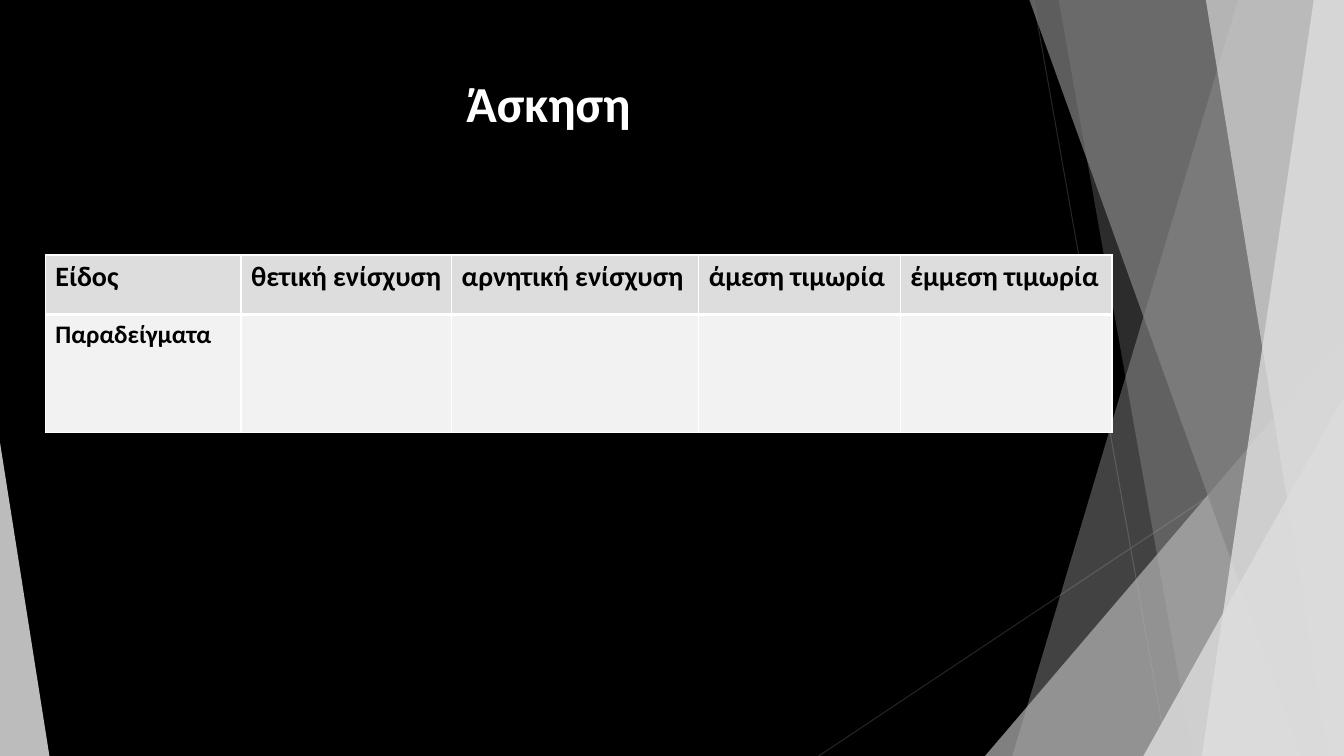
from lxml import etree
from pptx import Presentation
from pptx.dml.color import RGBColor
from pptx.enum.shapes import MSO_CONNECTOR, MSO_SHAPE
from pptx.enum.text import MSO_ANCHOR, PP_ALIGN
from pptx.oxml.ns import qn
from pptx.util import Inches, Pt

STRAIGHT = MSO_CONNECTOR.STRAIGHT
TRIANGLE = MSO_SHAPE.ISOSCELES_TRIANGLE
TOP = MSO_ANCHOR.TOP
CENTER = PP_ALIGN.CENTER

WIDTH, HEIGHT = 13.33, 7.5
TITLE_ONLY = 5
FONT = "Calibri"
BLACK, WHITE = "000000", "FFFFFF"
PALE, LIGHT = "DDDDDD", "F2F2F2"
HEADINGS = ["Είδος", "θετική ενίσχυση", "αρνητική ενίσχυση",
            "άμεση τιμωρία", "έμμεση τιμωρία"]
EXAMPLES = ["Παραδείγματα", "", "", "", ""]
COLUMN_WIDTHS = [1.94, 2.09, 2.45, 2, 2.1]
ROW_HEIGHTS = [0.59, 1.17]


def color(value):
    return RGBColor.from_string(value)


def format_text(frame, size, text_color):
    for para in frame.paragraphs:
        for span in para.runs:
            span.font.name = FONT
            span.font.size = Pt(size)
            span.font.bold = True
            span.font.color.rgb = color(text_color)


def paint(shape, fill, opacity):
    """Give a facet a see-through fill with no outline; opacity is in percent."""
    shape.shadow.inherit = False
    shape.line.fill.background()
    shape.fill.solid()
    shape.fill.fore_color.rgb = color(fill)
    tone = shape.fill._xPr.find(qn("a:solidFill"))[0]
    etree.SubElement(tone, qn("a:alpha"), val=str(opacity * 1000))


def add_ray(page, start, end):
    ray = page.shapes.add_connector(STRAIGHT, *map(Inches, start + end))
    ray.line.color.rgb = color("262626")
    ray.line.width = Pt(0.75)
    etree.SubElement(ray._element.spPr, qn("a:effectLst"))


def add_band(page, top_left, bottom_left, fill, opacity):
    """Fill the slide's height from a slanted left edge to the right side."""
    corners = [(WIDTH, 0), (WIDTH, HEIGHT), (bottom_left, HEIGHT)]
    builder = page.shapes.build_freeform(Inches(top_left), 0)
    builder.add_line_segments([(Inches(x), Inches(y)) for x, y in corners])
    paint(builder.convert_to_shape(), fill, opacity)


def add_corner(page, left, width, height, apex, fill, opacity):
    """Stand a right triangle on the slide's bottom edge; apex is 0 left, 1 right."""
    box = map(Inches, (left, HEIGHT - height, width, height))
    corner = page.shapes.add_shape(TRIANGLE, *box)
    corner.adjustments[0] = apex
    paint(corner, fill, opacity)


def add_facets(page):
    add_ray(page, (10.25, 0), (11.58, HEIGHT))
    add_ray(page, (WIDTH, 4.03), (8.12, HEIGHT))
    add_band(page, 12.28, 10.04, PALE, 30)
    add_band(page, 10.5, 11.83, PALE, 20)
    add_corner(page, 9.77, 3.56, 4.17, 1, "B2B2B2", 72)
    add_band(page, 10.21, 12.91, "858585", 70)
    add_band(page, 13.03, 11.92, "EBEBEB", 70)
    add_band(page, 11.96, 13.18, PALE, 65)
    add_corner(page, 11.34, 1.99, 3.57, 1, PALE, 80)
    add_corner(page, 0, 0.49, 3.11, 0, PALE, 85)


def add_title(page, left, top, width, height):
    title = page.shapes.title
    title.left, title.top = Inches(left), Inches(top)
    title.width, title.height = Inches(width), Inches(height)
    title.text_frame.text = "Άσκηση"
    title.text_frame.vertical_anchor = TOP
    title.text_frame.paragraphs[0].alignment = CENTER
    format_text(title.text_frame, 36, WHITE)


def style_cell(cell, fill, bottom_width):
    properties = cell._tc.get_or_add_tcPr()
    widths = {"a:lnL": 1, "a:lnR": 1, "a:lnT": 1, "a:lnB": bottom_width}
    for side, width in widths.items():
        border = etree.SubElement(properties, qn(side), w=str(Pt(width)))
        solid = etree.SubElement(border, qn("a:solidFill"))
        etree.SubElement(solid, qn("a:srgbClr"), val=WHITE)
    cell.fill.solid()
    cell.fill.fore_color.rgb = color(fill)


def add_exercise_table(page, left, top):
    box = map(Inches, (left, top, sum(COLUMN_WIDTHS), sum(ROW_HEIGHTS)))
    table = page.shapes.add_table(
        len(ROW_HEIGHTS), len(COLUMN_WIDTHS), *box).table
    for column, width in zip(table.columns, COLUMN_WIDTHS):
        column.width = Inches(width)
    for row, height in zip(table.rows, ROW_HEIGHTS):
        row.height = Inches(height)
    row_styles = [(HEADINGS, PALE, 20, 3), (EXAMPLES, LIGHT, 18, 1)]
    for row, (texts, fill, size, bottom_width) in zip(table.rows, row_styles):
        for cell, text in zip(row.cells, texts):
            cell.text_frame.text = text
            format_text(cell.text_frame, size, BLACK)
            style_cell(cell, fill, bottom_width)


def main():
    deck = Presentation()
    deck.slide_width, deck.slide_height = Inches(WIDTH), Inches(HEIGHT)
    page = deck.slides.add_slide(deck.slide_layouts[TITLE_ONLY])
    page.background.fill.solid()
    page.background.fill.fore_color.rgb = color(BLACK)
    add_facets(page)
    add_title(page, 0.74, 0.67, 9.4, 1.44)
    add_exercise_table(page, 0.45, 2.53)
    deck.save("out.pptx")


if __name__ == "__main__":
    main()
